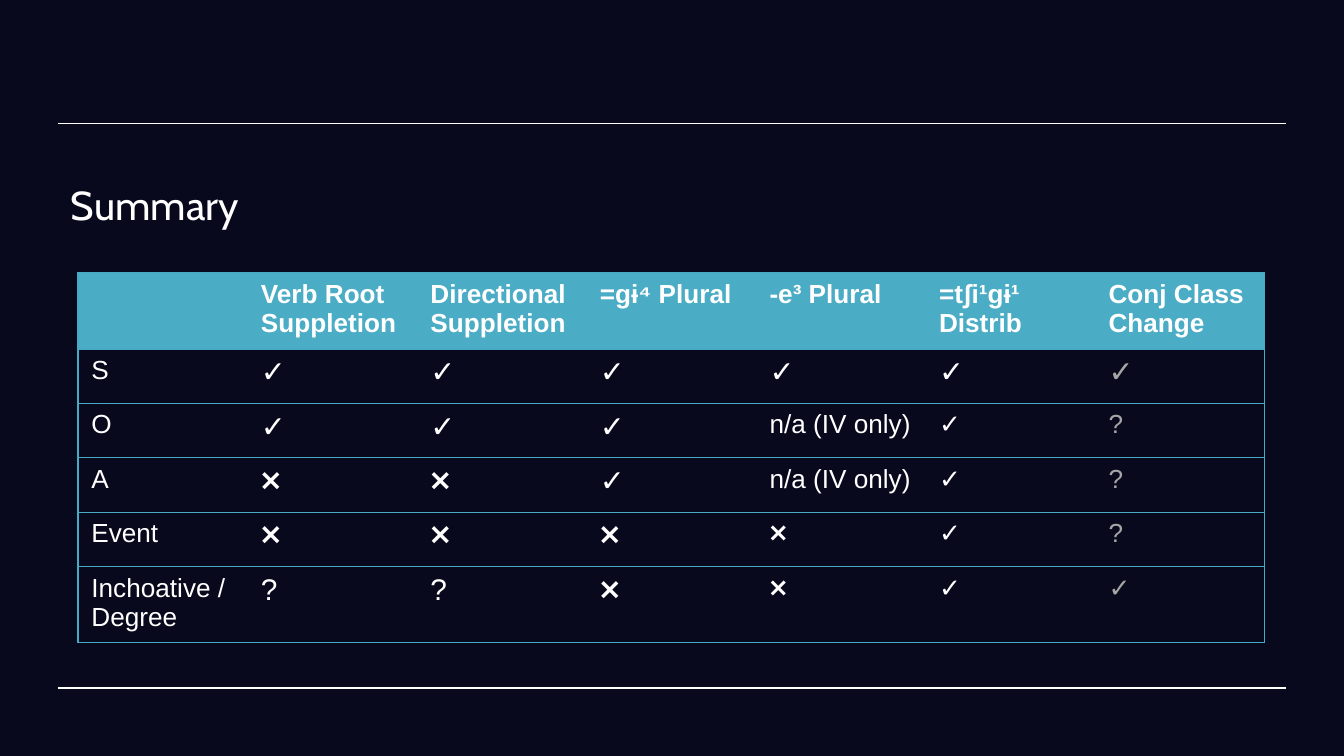
from lxml.etree import SubElement
from pptx import Presentation
from pptx.dml.color import RGBColor
from pptx.enum.shapes import MSO_CONNECTOR
from pptx.enum.text import MSO_ANCHOR
from pptx.oxml import parse_xml
from pptx.oxml.ns import nsdecls, qn
from pptx.util import Inches, Pt

BACKGROUND, WHITE, GREY = "09091E", "FFFFFF", "A6A6A6"
HEADER_FILL, BORDER = "4BACC6", "46AAC5"
YES, NO, NA = "✓", "❌", "n/a (IV only)"

ROWS = [
    ["", "Verb Root Suppletion", "Directional Suppletion", "=gɨ⁴ Plural",
     "-e³ Plural", "=tʃi¹gɨ¹ Distrib", "Conj Class Change"],
    ["S", YES, YES, YES, YES, YES, YES],
    ["O", YES, YES, YES, NA, YES, "?"],
    ["A", NO, NO, YES, NA, YES, "?"],
    ["Event", NO, NO, NO, NO, YES, "?"],
    ["Inchoative / Degree", "?", "?", NO, NO, YES, YES],
]


def color(value: str) -> RGBColor:
    return RGBColor.from_string(value)


def write(tf, text: str, *, size=14, font="Arial", fill=WHITE, bold=False) -> None:
    p = tf.paragraphs[0]
    if not text:
        p.font.size = Pt(size)
        return
    r = p.add_run()
    r.text = text
    r.font.size, r.font.name, r.font.bold = Pt(size), font, bold
    r.font.color.rgb = color(fill)


def add_rule(slide, y: float) -> None:
    line = slide.shapes.add_connector(
        MSO_CONNECTOR.STRAIGHT, Inches(0.43), Inches(y), Inches(9.57), Inches(y))
    line.line.color.rgb = color(WHITE)
    line.line.width = Pt(0.75)
    SubElement(line._element.spPr, qn("a:effectLst"))


def set_borders(cell, visible: str) -> None:
    """Draw the sides named in visible (letters of LRTB) and clear the others."""
    tc_pr = cell._tc.get_or_add_tcPr()
    for i, side in enumerate("LRTB"):
        paint = (f'<a:solidFill><a:srgbClr val="{BORDER}"/></a:solidFill>'
                 if side in visible else "<a:noFill/>")
        tc_pr.insert(i, parse_xml(
            f'<a:ln{side} {nsdecls("a")} w="{Pt(0.75)}">{paint}</a:ln{side}>'))


def add_summary_table(slide) -> None:
    n_rows, n_cols = len(ROWS), len(ROWS[0])
    height = Inches(2.81)
    frame = slide.shapes.add_table(
        n_rows, n_cols, Inches(0.58), Inches(2.03), Inches(8.83), height)
    table = frame.table
    table.horz_banding = False
    for row in table.rows:
        row.height = Inches(0.405)
    frame.height = height

    for i, texts in enumerate(ROWS):
        for j, text in enumerate(texts):
            cell = table.cell(i, j)
            header, last = i == 0, j == n_cols - 1
            if header:
                cell.fill.solid()
                cell.fill.fore_color.rgb = color(HEADER_FILL)
            else:
                cell.fill.background()
            set_borders(cell, "TB" + ("L" if j == 0 else "") + ("R" if last else ""))
            large = (i == 1 and j > 0) or (i > 1 and 1 <= j <= 3)
            write(cell.text_frame, text, size=16 if large else 14, bold=header,
                  fill=GREY if last and not header else WHITE)


def main() -> None:
    prs = Presentation()
    prs.slide_width, prs.slide_height = Inches(10), Inches(5.625)
    s = prs.slides.add_slide(prs.slide_layouts[6])
    s.background.fill.solid()
    s.background.fill.fore_color.rgb = color(BACKGROUND)

    for y in (0.92, 5.12):
        add_rule(s, y)

    title = s.shapes.add_textbox(Inches(0.43), Inches(1.24), Inches(8.83), Inches(0.47))
    tf = title.text_frame
    tf.word_wrap = True
    tf.vertical_anchor = MSO_ANCHOR.TOP
    tf.margin_left = tf.margin_right = tf.margin_top = tf.margin_bottom = Inches(0.1)
    write(tf, "Summary", size=21.6, font="Cabin")

    add_summary_table(s)
    prs.save("out.pptx")


if __name__ == "__main__":
    main()
